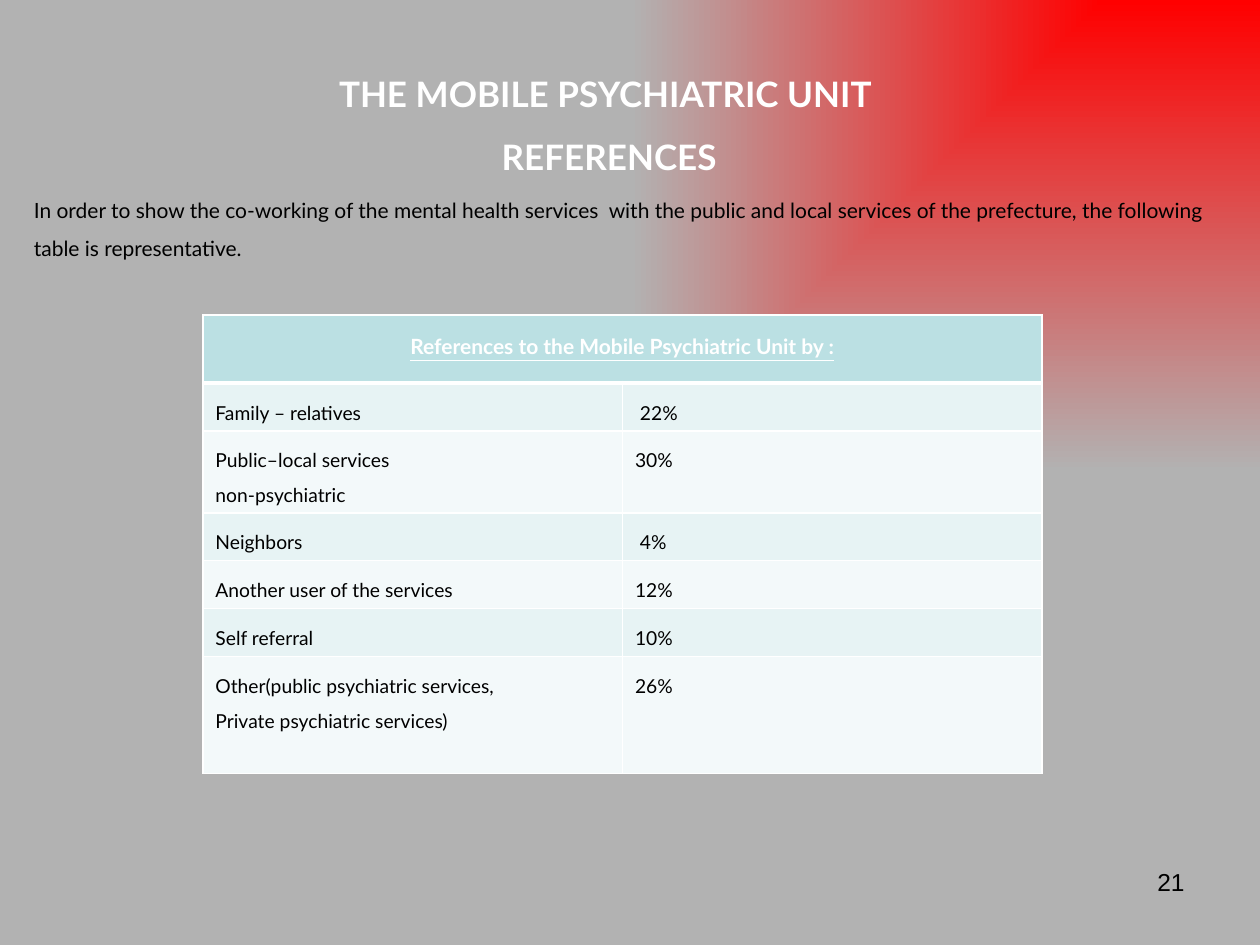
from lxml.etree import SubElement
from pptx import Presentation
from pptx.dml.color import RGBColor
from pptx.enum.text import MSO_ANCHOR, PP_ALIGN
from pptx.oxml import parse_xml
from pptx.oxml.ns import nsdecls, qn
from pptx.util import Inches, Pt

TITLE = "THE MOBILE PSYCHIATRIC UNIT \vREFERENCES"
INTRO = ("In order to show the co-working of the mental health services  with the public "
         "and local services of the prefecture, the following table is representative.")
HEADER = "References to the Mobile Psychiatric Unit by :"
REFERENCES = [
    ("Family – relatives", " 22%", 0.38),
    ("Public–local services\nnon-psychiatric", "30%", 0.65),
    ("Neighbors", " 4%", 0.38),
    ("Another user of the services", "12%", 0.38),
    ("Self referral", "10%", 0.38),
    ("Other(public psychiatric services,\nPrivate psychiatric services)", "26%", 0.93),
]
HEADER_HEIGHT = 0.54
BANDS = ("E7F3F4", "F3F9FA")
BACKGROUND = f"""<p:bg {nsdecls("p", "a")}><p:bgPr><a:gradFill rotWithShape="0"><a:gsLst>
<a:gs pos="0"><a:srgbClr val="FF0000"/></a:gs><a:gs pos="100000"><a:srgbClr val="B2B2B2"/></a:gs>
</a:gsLst><a:path path="rect"><a:fillToRect l="100000" b="100000"/></a:path></a:gradFill>
<a:effectLst/></p:bgPr></p:bg>"""


def rgb(value):
    return RGBColor.from_string(value)


def write(tf, text, size, color="000000", font="Lato", bold=False, underline=False,
          align=PP_ALIGN.LEFT, spacing=1.5, before=0):
    tf.text = text
    tf.word_wrap = True
    for p in tf.paragraphs:
        p.alignment = align
        p.line_spacing = spacing
        p.space_before = Pt(before)
        for r in p.runs:
            r.font.size = Pt(size)
            r.font.name = font
            r.font.bold = bold
            r.font.underline = underline
            r.font.color.rgb = rgb(color)


def style_cell(cell, fill, bottom=1):
    pr = cell._tc.get_or_add_tcPr()
    for side, width in (("L", 1), ("R", 1), ("T", 1), ("B", bottom)):
        ln = SubElement(pr, qn(f"a:ln{side}"), w=str(Pt(width)))
        SubElement(SubElement(ln, qn("a:solidFill")), qn("a:srgbClr"), val="FFFFFF")
    cell.fill.solid()
    cell.fill.fore_color.rgb = rgb(fill)


def add_text(s, left, top, width, height, text, size, **style):
    box = s.shapes.add_textbox(Inches(left), Inches(top), Inches(width), Inches(height))
    write(box.text_frame, text, size, **style)


def add_references(s):
    heights = [HEADER_HEIGHT] + [height for _, _, height in REFERENCES]
    table = s.shapes.add_table(len(heights), 2, Inches(1.61), Inches(2.5),
                               Inches(6.66), Inches(sum(heights))).table
    for column in table.columns:
        column.width = Inches(3.33)
    for row, height in zip(table.rows, heights):
        row.height = Inches(height)
    table.cell(0, 0).merge(table.cell(0, 1))
    for cell in table.rows[0].cells:
        style_cell(cell, "BBE0E3", bottom=3)
    write(table.cell(0, 0).text_frame, HEADER, 12, color="FFFFFF", bold=True,
          underline=True, align=PP_ALIGN.CENTER)
    for i, (source, share, _) in enumerate(REFERENCES):
        for j, text in enumerate((source, share)):
            cell = table.cell(i + 1, j)
            style_cell(cell, BANDS[i % 2])
            write(cell.text_frame, text, 11)


def main():
    prs = Presentation()
    prs.slide_width, prs.slide_height = Inches(10), Inches(7.5)
    s = prs.slides.add_slide(prs.slide_layouts[5])
    s.element.cSld.insert(0, parse_xml(BACKGROUND))

    title = s.shapes.title
    title.left, title.top = Inches(1.67), Inches(0.17)
    title.width, title.height = Inches(6.33), Inches(1.08)
    tf = title.text_frame
    tf.vertical_anchor = MSO_ANCHOR.MIDDLE
    tf.margin_top = Inches(0.45)
    write(tf, TITLE, 20, color="FFFFFF", bold=True, align=PP_ALIGN.CENTER)

    add_text(s, 0.17, 1.42, 9.58, 5.42, INTRO, 12, before=2.4)
    add_references(s)
    add_text(s, 7.17, 6.83, 2.33, 0.52, "21", 14, font="Arial",
             align=PP_ALIGN.RIGHT, spacing=1.0)
    prs.save("out.pptx")


if __name__ == "__main__":
    main()
